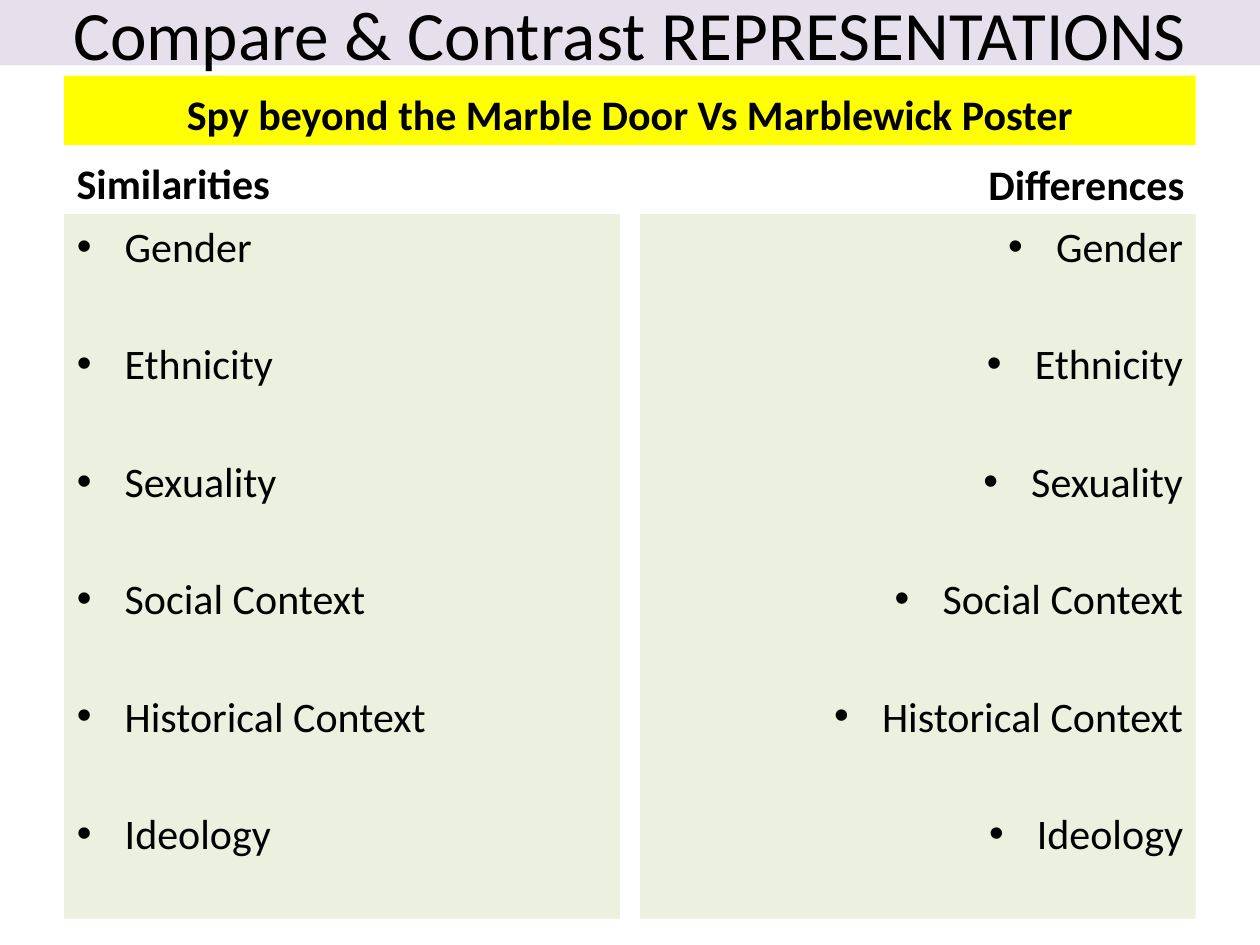
import pptx
import pptx.util
import pptx.dml.color
import pptx.enum.text
import lxml.etree
from pptx.oxml.ns import qn

Inches, Pt = pptx.util.Inches, pptx.util.Pt
RGBColor = pptx.dml.color.RGBColor
ALIGN = pptx.enum.text.PP_ALIGN
ANCHOR = pptx.enum.text.MSO_ANCHOR

BLACK = RGBColor(0x00, 0x00, 0x00)
LILAC = RGBColor(0xE6, 0xE0, 0xEC)
YELLOW = RGBColor(0xFF, 0xFF, 0x00)
PALE_GREEN = RGBColor(0xEB, 0xF1, 0xDE)

LEFT, RIGHT, COLUMN_WIDTH = 0.51, 5.08, 4.41
TOPICS = ["Gender", "Ethnicity", "Sexuality", "Social Context",
          "Historical Context", "Ideology"]


def place(box, left, top, width, height, fill=None):
    """Position a box and optionally fill it."""
    box.left, box.top = Inches(left), Inches(top)
    box.width, box.height = Inches(width), Inches(height)
    if fill is not None:
        box.fill.solid()
        box.fill.fore_color.rgb = fill


def set_bullet(paragraph, indent=0.38):
    """Give a paragraph a round bullet with a hanging indent."""
    properties = paragraph._p.get_or_add_pPr()
    properties.set("marL", str(Inches(indent)))
    properties.set("indent", str(Inches(-indent)))
    lxml.etree.SubElement(properties, qn("a:buFont")).set("typeface", "Arial")
    lxml.etree.SubElement(properties, qn("a:buChar")).set("char", "•")


def write(box, *lines, size=24, bold=False, align=ALIGN.LEFT,
          anchor=ANCHOR.BOTTOM, bullets=False, gap=0):
    """Write one paragraph per line in a common format."""
    frame = box.text_frame
    frame.word_wrap = True
    frame.auto_size = pptx.enum.text.MSO_AUTO_SIZE.NONE
    frame.vertical_anchor = anchor
    frame.text = "\n".join(lines)
    for paragraph in frame.paragraphs:
        paragraph.alignment = align
        paragraph.space_before = Pt(0)
        paragraph.space_after = Pt(gap)
        if bullets:
            set_bullet(paragraph)
        font = paragraph.runs[0].font
        font.name, font.size, font.bold = "Calibri", Pt(size), bold
        font.color.rgb = BLACK


def add_topics(box, left, align):
    """Fill one column with the topics to compare."""
    place(box, left, 1.7, COLUMN_WIDTH, 5.59, PALE_GREEN)
    write(box, *TOPICS, align=align, anchor=ANCHOR.TOP, bullets=True, gap=38.3)


def main():
    deck = pptx.Presentation()
    deck.slide_width, deck.slide_height = Inches(10), Inches(7.5)
    slide = deck.slides.add_slide(deck.slide_layouts.get_by_name("Comparison"))
    title, banner, similarities, differences_heading, differences = slide.placeholders

    # Title and subject banner
    place(title, 0, 0, 10, 0.52, LILAC)
    write(title, "Compare & Contrast REPRESENTATIONS", size=39.6,
          align=ALIGN.CENTER, anchor=ANCHOR.MIDDLE)
    place(banner, LEFT, 0.6, 8.98, 0.55, YELLOW)
    write(banner, "Spy beyond the Marble Door Vs Marblewick Poster",
          bold=True, align=ALIGN.CENTER)

    # Column headings
    similarities_heading = slide.shapes.add_textbox(0, 0, 0, 0)
    place(similarities_heading, LEFT, 1.15, 4.42, 0.55)
    write(similarities_heading, "Similarities", bold=True)
    place(differences_heading, RIGHT, 1.19, 4.42, 0.52)
    write(differences_heading, "Differences", bold=True, align=ALIGN.RIGHT)

    # Topic columns
    add_topics(similarities, LEFT, ALIGN.LEFT)
    add_topics(differences, RIGHT, ALIGN.RIGHT)

    deck.save("out.pptx")


if __name__ == "__main__":
    main()
